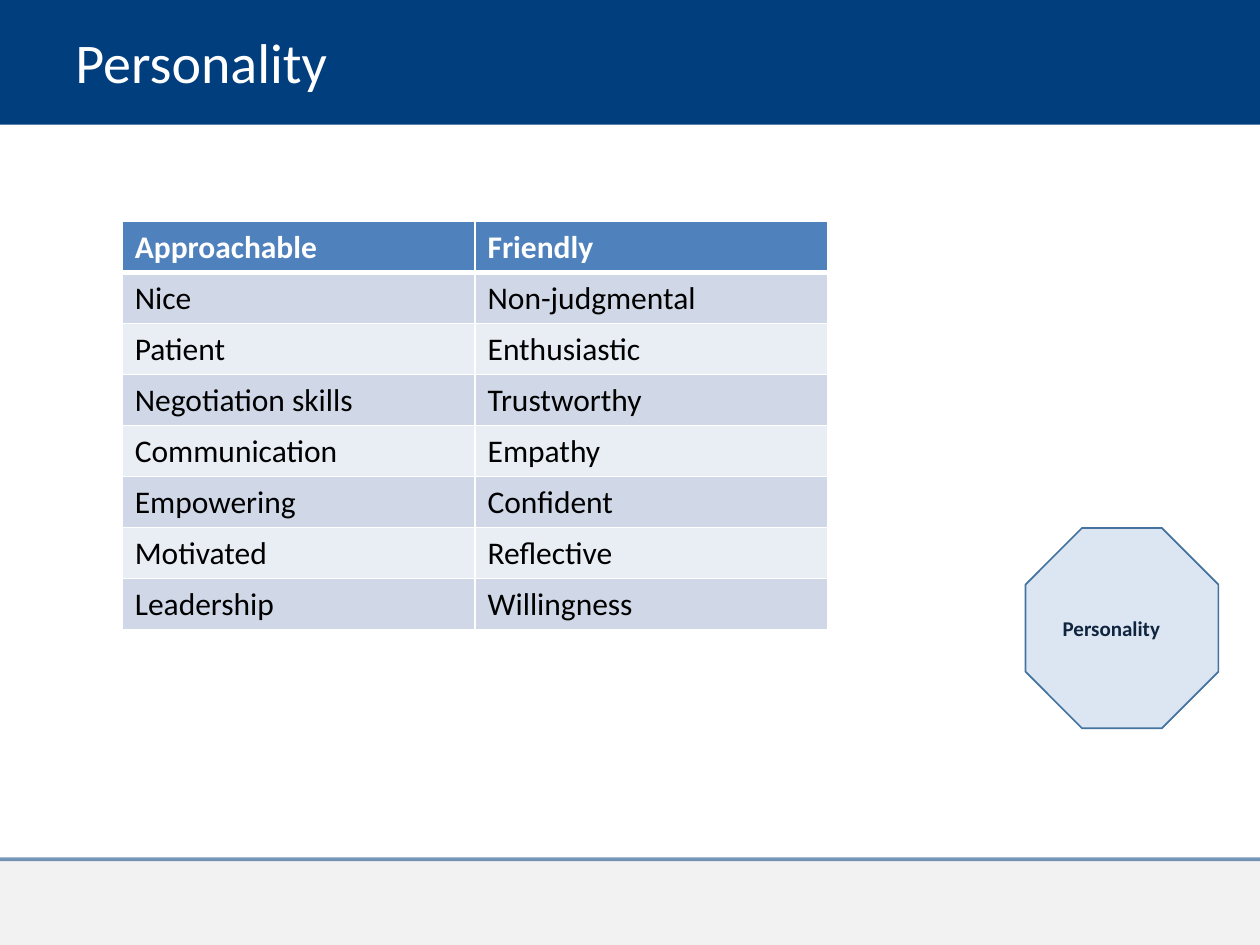
from lxml.etree import SubElement
from pptx import Presentation
from pptx.dml.color import RGBColor
from pptx.enum.shapes import MSO_CONNECTOR, MSO_SHAPE
from pptx.enum.text import MSO_ANCHOR, PP_ALIGN
from pptx.oxml.ns import qn
from pptx.util import Inches, Pt

FONT = "Calibri"
COLORS = {
    "navy": "003E7E",
    "gray": "808080",
    "white": "FFFFFF",
    "black": "000000",
    "octagon": "DCE6F2",
    "outline": "43739E",
    "label": "0F243E",
    "header": "4F81BD",
    "odd": "D0D8E8",
    "even": "E9EDF4",
}
TRAITS = [
    ("Approachable", "Friendly"),
    ("Nice", "Non-judgmental"),
    ("Patient", "Enthusiastic"),
    ("Negotiation skills", "Trustworthy"),
    ("Communication", "Empathy"),
    ("Empowering", "Confident"),
    ("Motivated", "Reflective"),
    ("Leadership", "Willingness"),
]


def rgb(name):
    return RGBColor.from_string(COLORS[name])


def set_alpha(fill_parent, percent):
    color = next(fill_parent.iter(qn("a:srgbClr")))
    SubElement(color, qn("a:alpha"), val=str(percent * 1000))


def write(frame, text, size, color, bold=False):
    para = frame.paragraphs[0]
    para.text = text
    para.alignment = PP_ALIGN.LEFT
    para.font.name = FONT
    para.font.size = Pt(size)
    para.font.bold = bold
    para.font.color.rgb = rgb(color)


def add_block(page, kind, box, fill):
    block = page.shapes.add_shape(kind, *map(Inches, box))
    block.shadow.inherit = False
    block.fill.solid()
    block.fill.fore_color.rgb = rgb(fill)
    block.line.fill.background()
    return block


def add_header(page, box, title):
    left, top, width, height = box
    add_block(page, MSO_SHAPE.RECTANGLE, box, "navy")
    title_box = page.shapes.add_textbox(
        Inches(left + 0.5), Inches(top + 0.14), Inches(6.94), Inches(height - 0.3))
    frame = title_box.text_frame
    frame.word_wrap = True
    frame.vertical_anchor = MSO_ANCHOR.MIDDLE
    write(frame, title, 32, "white")


def add_footer(page, box):
    left, top, width, height = box
    band = add_block(page, MSO_SHAPE.RECTANGLE, box, "gray")
    set_alpha(band.fill._xPr, 10)
    rule = page.shapes.add_connector(
        MSO_CONNECTOR.STRAIGHT, Inches(left), Inches(top), Inches(left + width), Inches(top))
    rule.line.color.rgb = rgb("navy")
    rule.line.width = Pt(2.25)
    properties = rule._element.spPr
    set_alpha(properties, 52)
    SubElement(properties, qn("a:effectLst"))


def add_octagon(page, box, label):
    octagon = add_block(page, MSO_SHAPE.OCTAGON, box, "octagon")
    octagon.line.color.rgb = rgb("outline")
    octagon.line.width = Pt(1)
    frame = octagon.text_frame
    frame.word_wrap = True
    frame.vertical_anchor = MSO_ANCHOR.MIDDLE
    frame.margin_left = frame.margin_right = Inches(0.07)
    frame.margin_top = frame.margin_bottom = Inches(0.04)
    write(frame, label, 12, "label", bold=True)


def set_borders(cell, row):
    widths = {"L": 1, "R": 1, "T": 3 if row == 1 else 1, "B": 3 if row == 0 else 1}
    properties = cell._tc.get_or_add_tcPr()
    for side, width in widths.items():
        border = SubElement(properties, qn(f"a:ln{side}"), w=str(Pt(width)))
        fill = SubElement(border, qn("a:solidFill"))
        SubElement(fill, qn("a:srgbClr"), val=COLORS["white"])


def add_traits(page, box, traits):
    left, top, width, height = box
    table = page.shapes.add_table(
        len(traits), len(traits[0]), *map(Inches, box)).table
    for row, names in enumerate(traits):
        table.rows[row].height = Inches(height / len(traits))
        is_header = row == 0
        fill = "header" if is_header else "odd" if row % 2 else "even"
        for column, name in enumerate(names):
            cell = table.cell(row, column)
            set_borders(cell, row)
            cell.fill.solid()
            cell.fill.fore_color.rgb = rgb(fill)
            write(cell.text_frame, name, 18, "white" if is_header else "black", is_header)


def main():
    deck = Presentation()
    deck.slide_width = Inches(10)
    deck.slide_height = Inches(7.5)
    page = deck.slides.add_slide(deck.slide_layouts[6])
    add_header(page, (0, 0, 10, 0.99), "Personality")
    add_footer(page, (0, 6.82, 10, 0.68))
    add_octagon(page, (8.14, 4.19, 1.53, 1.59), "Personality")
    add_traits(page, (0.97, 1.76, 5.6, 3.24), TRAITS)
    deck.save("out.pptx")


if __name__ == "__main__":
    main()
